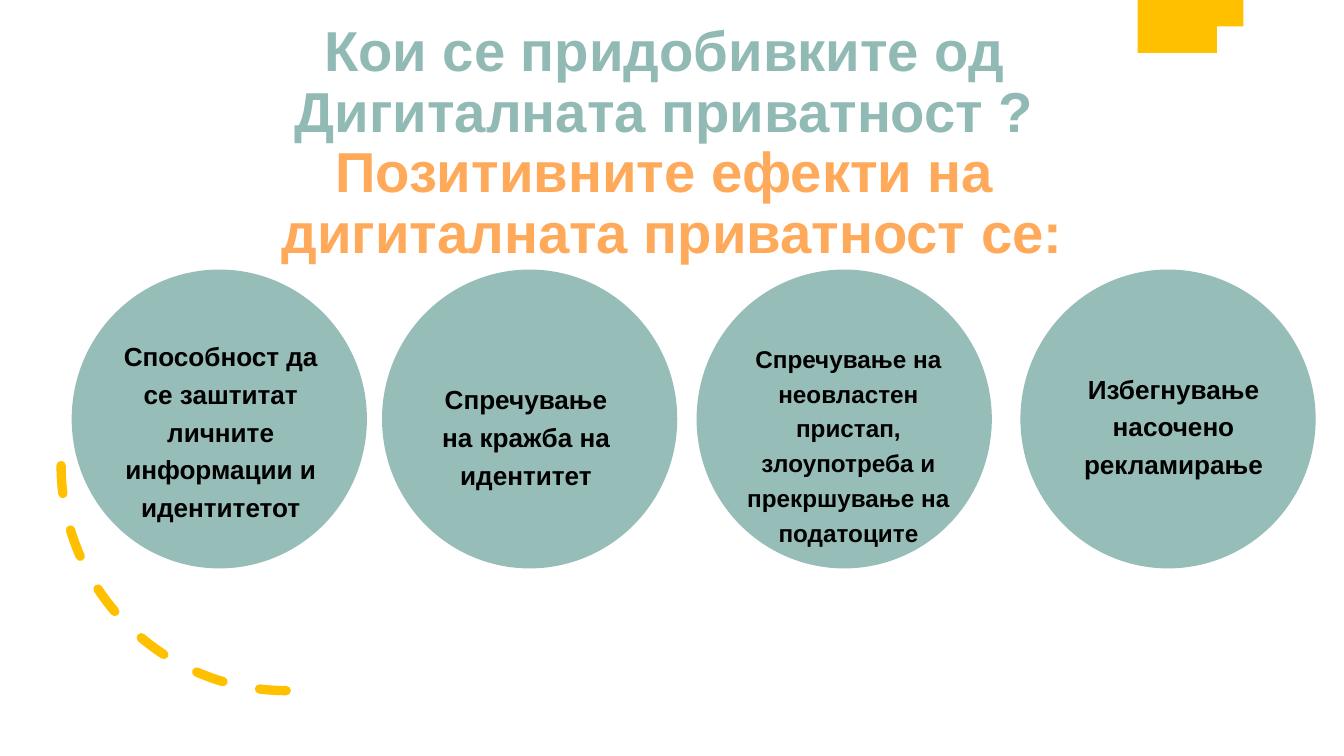
from math import asin, cos, pi, sin

from lxml import etree
from pptx import Presentation
from pptx.dml.color import RGBColor
from pptx.enum.dml import MSO_LINE
from pptx.enum.shapes import MSO_SHAPE
from pptx.enum.text import MSO_ANCHOR, PP_ALIGN
from pptx.util import Cm, Pt

ARC, OVAL = MSO_SHAPE.ARC, MSO_SHAPE.OVAL
DASH = MSO_LINE.DASH
MIDDLE, CENTER = MSO_ANCHOR.MIDDLE, PP_ALIGN.CENTER

YELLOW = RGBColor(0xFF, 0xC0, 0x00)
TEAL = RGBColor(0x92, 0xBA, 0xB5)
ORANGE = RGBColor(0xFF, 0xAA, 0x5A)
CIRCLE = RGBColor(0x96, 0xBD, 0xB8)
BLACK = RGBColor(0x00, 0x00, 0x00)


def fill_plain(sp, color):
    sp.shadow.inherit = False
    sp.fill.solid()
    sp.fill.fore_color.rgb = color
    sp.line.fill.background()


def style(p, size, spacing):
    p.alignment = CENTER
    p.line_spacing = spacing
    p.font.name = "Arial"
    p.font.size = Pt(size)
    p.font.bold = True


prs = Presentation()
prs.slide_width, prs.slide_height = Cm(50.8), Cm(28.58)
s = prs.slides.add_slide(prs.slide_layouts[6])

# Yellow disc cut off by the top edge
cx, cy, radius = 44.9, -0.43, 2.41
start = asin(-cy / radius)
steps = 48
angles = [start + (pi - 2 * start) * i / steps for i in range(steps + 1)]
points = [(cx + radius * cos(a), cy + radius * sin(a)) for a in angles]
builder = s.shapes.build_freeform(*points[0], scale=Cm(1))
builder.add_line_segments(points[1:], close=True)
fill_plain(builder.convert_to_shape(), YELLOW)

# Title
tf = s.shapes.add_textbox(Cm(3.5), Cm(3.07), Cm(43.8), Cm(4.78)).text_frame
tf.word_wrap = True
tf.vertical_anchor = MIDDLE
p = tf.paragraphs[0]
style(p, 60.3, 0.9)
title = [
    ("Кои се придобивките од ", TEAL),
    ("Дигиталната приватност ? ", TEAL),
    ("Позитивните ефекти на ", ORANGE),
    ("дигиталната приватност се:", ORANGE),
]
for i, (text, color) in enumerate(title):
    if i:
        p.add_line_break()
    r = p.add_run()
    r.text = text
    r.font.color.rgb = color

# Dashed arc at the lower left
sp = s.shapes.add_shape(ARC, Cm(2.31), Cm(9.09), Cm(17.02), Cm(17.02))
sp.shadow.inherit = False
sp.fill.background()
sp.rotation = 270
sp._element.spPr.xfrm.set("flipH", "1")
sp.line.color.rgb = YELLOW
sp.line.width = Pt(10)
sp.line.dash_style = DASH
sp.line._ln.set("cap", "rnd")
etree.SubElement(sp.line._ln, "{http://schemas.openxmlformats.org/drawingml/2006/main}round")

# Benefits: circle left, text box (left, top, width, height), font size, text
benefits = [
    (2.71, (4.67, 12.65, 7.34, 6.02), 28,
     "Способност да се заштитат личните информации и идентитетот"),
    (14.44, (16.36, 14.27, 7.04, 2.39), 28,
     "Спречување на кражба на идентитет"),
    (26.33, (28.07, 12.78, 8, 7.77), 26,
     "Спречување на неовластен пристап, злоупотреба и прекршување на податоците"),
    (38.57, (40.61, 13.87, 7.49, 3.61), 28,
     "Избегнување насочено рекламирање"),
]
for left, box, size, text in benefits:
    sp = s.shapes.add_shape(OVAL, Cm(left), Cm(10.19), Cm(11.16), Cm(11.3))
    fill_plain(sp, CIRCLE)
    tf = s.shapes.add_textbox(*map(Cm, box)).text_frame
    tf.word_wrap = True
    tf.margin_left = tf.margin_right = tf.margin_top = tf.margin_bottom = 0
    p = tf.paragraphs[0]
    p.text = text
    style(p, size, 1.2)
    p.font.color.rgb = BLACK

prs.save("out.pptx")
